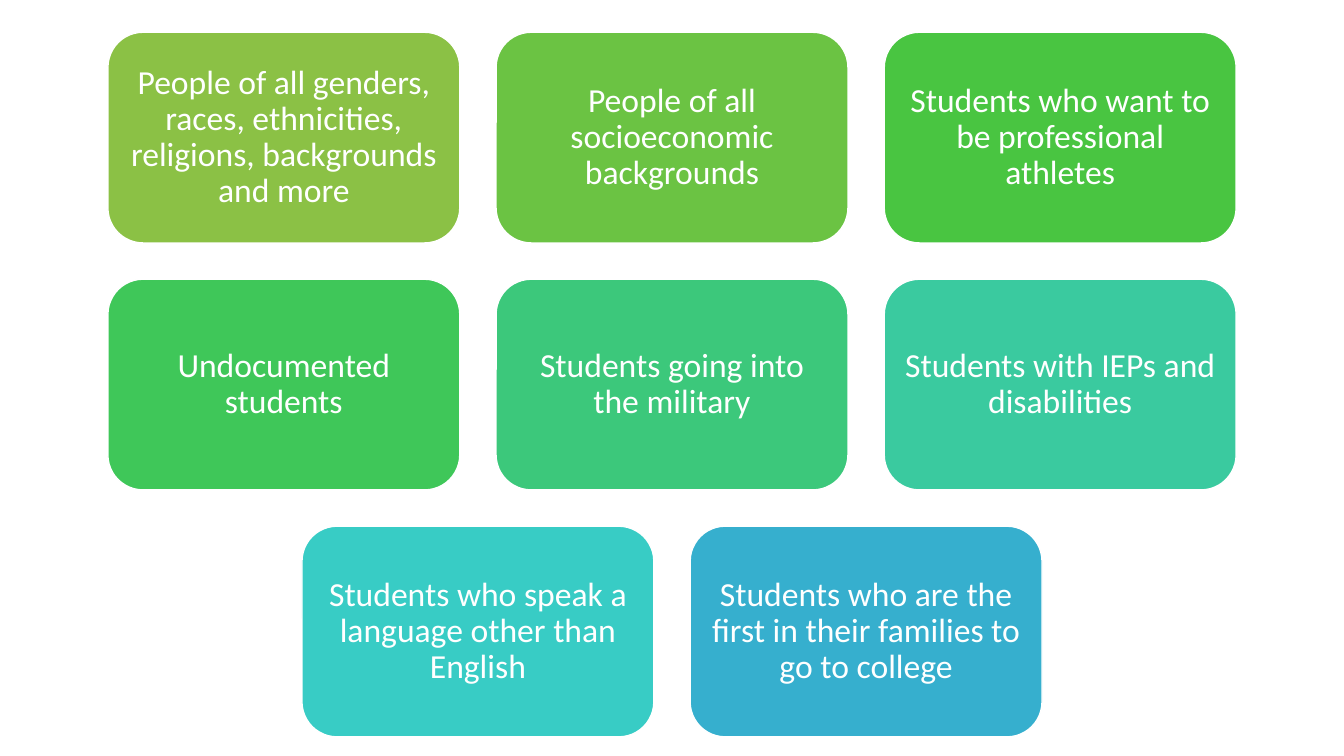
from pptx import Presentation
from pptx.dml.color import RGBColor
from pptx.enum.shapes import MSO_SHAPE
from pptx.enum.text import MSO_ANCHOR, PP_ALIGN
from pptx.util import Inches, Pt

# Content: rows of (text, fill)
ROWS = [
    [("People of all genders, races, ethnicities, religions, backgrounds and more", "8BC145"),
     ("People of all socioeconomic backgrounds", "6BC343"),
     ("Students who want to be professional athletes", "49C541")],
    [("Undocumented students", "3FC759"),
     ("Students going into the military", "3CC87B"),
     ("Students with IEPs and disabilities", "3ACA9F")],
    [("Students who speak a language other than English", "38CCC5"),
     ("Students who are the first in their families to go to college", "36AFCE")],
]

# Grid, in inches
SLIDE_W, SLIDE_H = 13.33, 7.5
CARD_W, CARD_H, GAP = 3.49, 2.09, 0.36
TOP, CENTER = 0.32, SLIDE_W / 2
FRAME = {"word_wrap": True, "vertical_anchor": MSO_ANCHOR.MIDDLE}
FRAME.update({f"margin_{side}": Inches(0.1) for side in ("left", "top", "right", "bottom")})
FONT = {"name": "Calibri", "size": Pt(24)}


def color(value):
    return RGBColor.from_string(value)


def set_all(target, values):
    for name, value in values.items():
        setattr(target, name, value)


def add_card(s, left, top, text, fill):
    sp = s.shapes.add_shape(MSO_SHAPE.ROUNDED_RECTANGLE, Inches(left), Inches(top),
                            Inches(CARD_W), Inches(CARD_H))
    sp.shadow.inherit = False
    sp.fill.solid()
    sp.fill.fore_color.rgb = color(fill)
    sp.line.color.rgb = color("FFFFFF")
    sp.line.width = Pt(1)
    tf = sp.text_frame
    set_all(tf, FRAME)
    p = tf.paragraphs[0]
    set_all(p, {"alignment": PP_ALIGN.CENTER, "line_spacing": 0.9})
    r = p.add_run()
    r.text = text
    set_all(r.font, FONT)
    r.font.color.rgb = color("FFFFFF")


prs = Presentation()
prs.slide_width, prs.slide_height = Inches(SLIDE_W), Inches(SLIDE_H)
s = prs.slides.add_slide(prs.slide_layouts[6])

# Each row is centered on the slide
for i, row in enumerate(ROWS):
    row_w = len(row) * (CARD_W + GAP) - GAP
    for j, (text, fill) in enumerate(row):
        add_card(s, CENTER - row_w / 2 + j * (CARD_W + GAP),
                 TOP + i * (CARD_H + GAP), text, fill)

prs.save("out.pptx")
